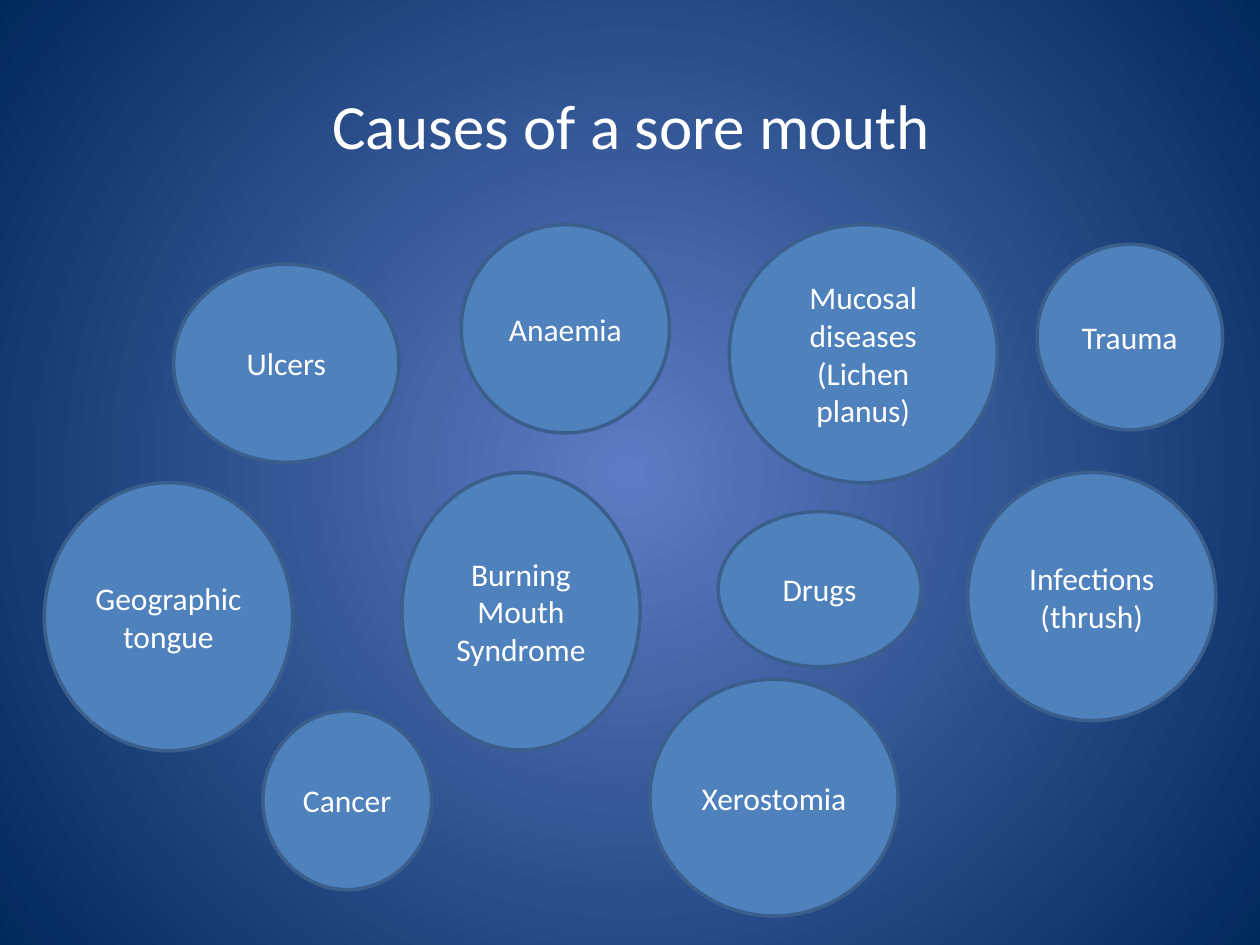
"""Build a slide showing the causes of a sore mouth as labelled ellipses."""
from lxml import etree
from pptx import Presentation, util as u
from pptx.dml.color import RGBColor
from pptx.enum import shapes, text
from pptx.oxml.ns import qn

WHITE = RGBColor(0xFF, 0xFF, 0xFF)
BLUE = RGBColor(0x4F, 0x81, 0xBD)
OUTLINE = RGBColor(0x3A, 0x5F, 0x8C)
GLOW = RGBColor(0x5E, 0x7C, 0xC5)
NAVY = RGBColor(0x00, 0x29, 0x5C)

SLIDE_SIZE = (720, 540)
TITLE = ("Causes of a sore mouth", (36.7, 25.9, 648, 90))
CAUSES = [
    ("Ulcers", (99.2, 151, 128.8, 113.2)),
    ("Mucosal diseases (Lichen planus)", (416.7, 128.4, 153.2, 147.4)),
    ("Cancer", (150.2, 406.2, 96.4, 102.2)),
    ("Infections (thrush)", (553, 270, 141.8, 141.8)),
    ("Burning Mouth Syndrome", (229.6, 270, 136.2, 158.6)),
    ("Anaemia", (263.6, 128.4, 119, 119)),
    ("Geographic tongue", (25.4, 275.8, 141.8, 153.2)),
    ("Xerostomia", (371.4, 388.2, 141.8, 135.2)),
    ("Trauma", (592.6, 139.6, 106, 106)),
]
BODY_CAUSE = ("Drugs", (410.4, 292.4, 116, 88.6))


def place(box, area):
    box.left, box.top, box.width, box.height = map(u.Pt, area)


def write(box, words, size=18, color=WHITE, font="Calibri"):
    frame = box.text_frame
    frame.word_wrap = True
    frame.auto_size = text.MSO_AUTO_SIZE.NONE
    frame.vertical_anchor = text.MSO_ANCHOR.MIDDLE
    para = frame.paragraphs[0]
    para.alignment = text.PP_ALIGN.CENTER
    para.space_before = u.Pt(0)
    span = para.add_run()
    span.text = words
    span.font.size = u.Pt(size)
    span.font.name = font
    span.font.color.rgb = color
    return para


def paint(box):
    box.fill.solid()
    box.fill.fore_color.rgb = BLUE
    box.line.color.rgb = OUTLINE
    box.line.width = u.Pt(2)


def paint_background(page):
    fill = page.background.fill
    fill.gradient()
    for stop, color, position in zip(fill.gradient_stops, (GLOW, NAVY), (0, 1)):
        stop.color.rgb = color
        stop.position = position
    gradient = next(page.element.iter(qn("a:gradFill")))
    gradient.remove(gradient.find(qn("a:lin")))
    radial = etree.SubElement(gradient, qn("a:path"), {"path": "circle"})
    etree.SubElement(radial, qn("a:fillToRect"), dict.fromkeys("ltrb", "50000"))


def add_body_ellipse(box, words, area):
    place(box, area)
    outline = etree.SubElement(box.element.spPr, qn("a:prstGeom"), {"prst": "ellipse"})
    etree.SubElement(outline, qn("a:avLst"))
    paint(box)
    properties = write(box, words)._p.get_or_add_pPr()
    properties.set("marL", "0")
    properties.set("indent", "0")
    etree.SubElement(properties, qn("a:buNone"))


def main():
    deck = Presentation()
    deck.slide_width, deck.slide_height = map(u.Pt, SLIDE_SIZE)
    page = deck.slides.add_slide(deck.slide_layouts[1])
    paint_background(page)

    title, area = TITLE
    place(page.shapes.title, area)
    write(page.shapes.title, title, size=36)

    for cause, area in CAUSES:
        box = page.shapes.add_shape(shapes.MSO_SHAPE.OVAL, *map(u.Pt, area))
        box.shadow.inherit = False
        paint(box)
        write(box, cause)

    add_body_ellipse(page.placeholders[1], *BODY_CAUSE)
    deck.save("out.pptx")


if __name__ == "__main__":
    main()
